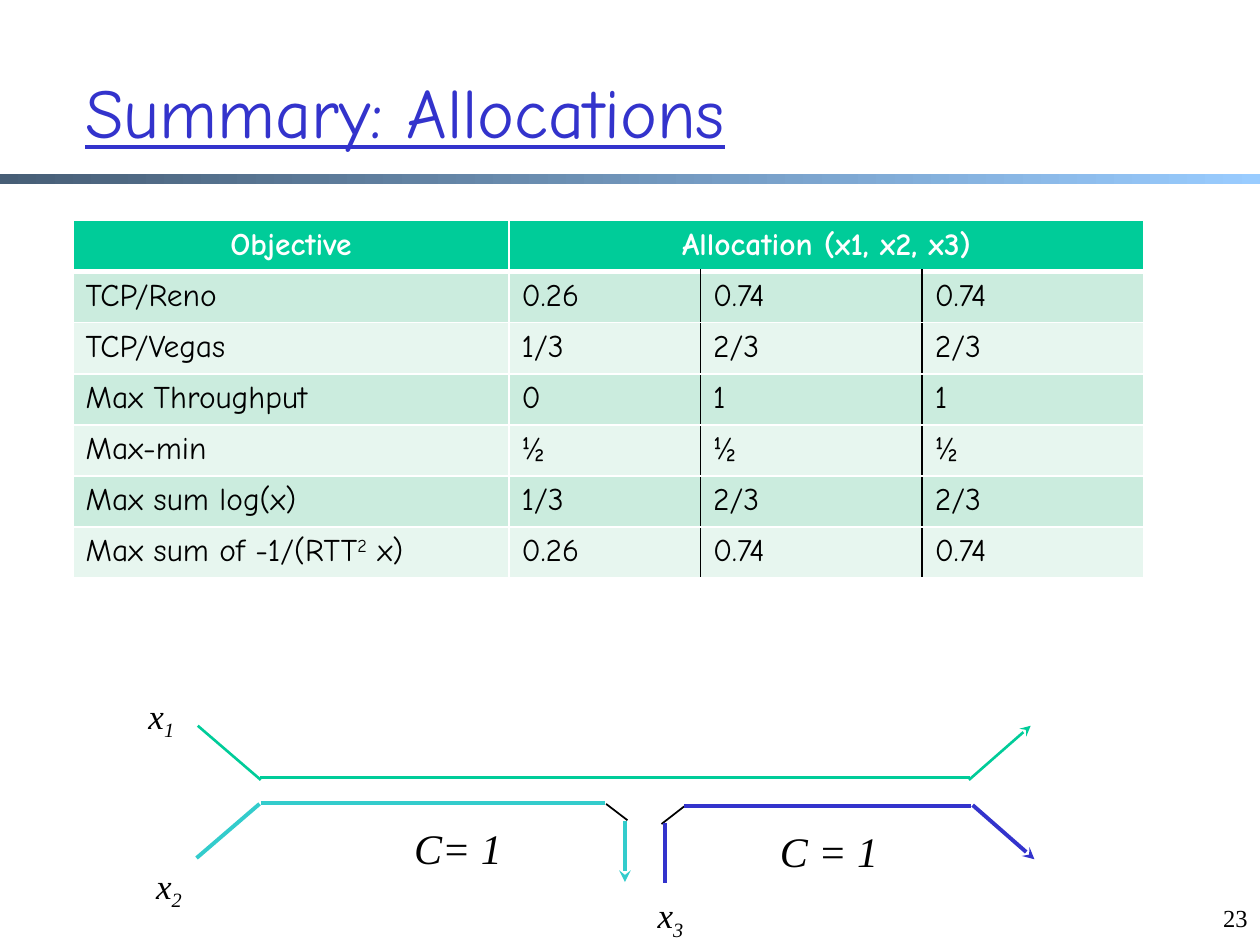
from dataclasses import dataclass

from lxml import etree
from pptx import Presentation
from pptx import util as u
from pptx.dml.color import RGBColor
from pptx.enum import shapes, text
from pptx.oxml import ns

Inches, Pt = u.Inches, u.Pt


@dataclass(frozen=True)
class Theme:
    heading_font: str = "Comic Neue"
    math_font: str = "Times New Roman"
    title_size: int = 40
    table_size: int = 18
    flow_size: int = 20
    capacity_size: int = 24
    number_size: int = 14
    black: str = "000000"
    white: str = "FFFFFF"
    blue: str = "3333CC"
    green: str = "00CC99"
    teal: str = "33CCCC"
    odd_row: str = "CBECDE"
    even_row: str = "E7F6EF"
    bar_start: str = "475E76"
    bar_end: str = "99CCFF"


theme = Theme()


def write(frame, *parts, size, font=theme.heading_font, color=theme.black,
          align=text.PP_ALIGN.LEFT, anchor=text.MSO_ANCHOR.TOP, wrap=True, **style):
    """Fill a text frame; a part is a string or a (string, baseline percent) pair."""
    frame.word_wrap = wrap
    if not wrap:
        frame.auto_size = text.MSO_AUTO_SIZE.SHAPE_TO_FIT_TEXT
    frame.vertical_anchor = anchor
    paragraph = frame.paragraphs[0]
    paragraph.alignment = align
    for part in parts:
        words, baseline = (part, 0) if isinstance(part, str) else part
        run = paragraph.add_run()
        run.text = words
        run.font.size = Pt(size)
        run.font.name = font
        run.font.color.rgb = RGBColor.from_string(color)
        for name, value in style.items():
            setattr(run.font, name, value)
        if baseline:
            run._r.get_or_add_rPr().set("baseline", str(baseline * 1000))


def add_xml(parent, tag, **attributes):
    return etree.SubElement(parent, ns.qn(tag), attributes)


prs = Presentation()
prs.slide_width, prs.slide_height = Inches(10), Inches(7.5)
slide = prs.slides.add_slide(prs.slide_layouts[6])

# Title and gradient bar
bar = slide.shapes.add_shape(shapes.MSO_SHAPE.RECTANGLE,
                             Inches(0), Inches(1.38), Inches(10), Inches(0.08))
bar.shadow.inherit = False
bar.line.fill.background()
bar.fill.gradient()
bar.fill.gradient_angle = 0
for stop, position, color in zip(bar.fill.gradient_stops, (0, 1),
                                 (theme.bar_start, theme.bar_end)):
    stop.position = position
    stop.color.rgb = RGBColor.from_string(color)

title = slide.shapes.add_textbox(Inches(0.58), Inches(0.25), Inches(8.5), Inches(1.25))
write(title.text_frame, "Summary: Allocations", size=theme.title_size, color=theme.blue,
      anchor=text.MSO_ANCHOR.MIDDLE, underline=True)

# Allocation table
allocations = [
    ("Objective", "Allocation (x1, x2, x3)", "", ""),
    ("TCP/Reno", "0.26", "0.74", "0.74"),
    ("TCP/Vegas", "1/3", "2/3", "2/3"),
    ("Max Throughput", "0", "1", "1"),
    ("Max-min", "½", "½", "½"),
    ("Max sum log(x)", "1/3", "2/3", "2/3"),
    (("Max sum of -1/(RTT", ("2", 30), " x)"), "0.26", "0.74", "0.74"),
]
table = slide.shapes.add_table(len(allocations), 4, Inches(0.58), Inches(1.75),
                               Inches(8.5), Inches(2.84)).table
for column, width in zip(table.columns, (3.46, 1.52, 1.76, 1.76)):
    column.width = Inches(width)
table.cell(0, 1).merge(table.cell(0, 3))

for row, values in enumerate(allocations):
    header = row == 0
    for col, value in enumerate(values):
        cell = table.cell(row, col)
        borders = {
            "a:lnL": (theme.black if row and col > 1 else theme.white, 1),
            "a:lnR": (theme.black if row and col in (1, 2) else theme.white, 1),
            "a:lnT": (theme.white, 3 if row == 1 else 1),
            "a:lnB": (theme.white, 3 if header else 1),
        }
        for side, (color, width) in borders.items():
            border = add_xml(cell._tc.get_or_add_tcPr(), side, w=str(Pt(width)))
            add_xml(add_xml(border, "a:solidFill"), "a:srgbClr", val=color)
        cell.fill.solid()
        cell.fill.fore_color.rgb = RGBColor.from_string(
            theme.green if header else theme.odd_row if row % 2 else theme.even_row)
        if value:
            parts = (value,) if isinstance(value, str) else value
            write(cell.text_frame, *parts, size=theme.table_size, bold=header,
                  color=theme.white if header else theme.black,
                  align=text.PP_ALIGN.CENTER if header else text.PP_ALIGN.LEFT)

# Flows through the two links: start, end, colour, width, arrow at the end
flow_lines = [
    ((4.81, 6.38), (4.98, 6.51), theme.black, 1, False),
    ((5.43, 6.40), (5.25, 6.54), theme.black, 1, False),
    ((1.57, 5.76), (2.07, 6.19), theme.green, 1.5, False),
    ((2.06, 6.17), (7.70, 6.17), theme.green, 1.5, False),
    ((7.69, 6.19), (8.18, 5.76), theme.green, 1.5, True),
    ((2.07, 6.37), (4.80, 6.37), theme.teal, 2.25, False),
    ((2.06, 6.38), (1.56, 6.81), theme.teal, 2.25, False),
    ((4.96, 6.52), (4.96, 7.00), theme.teal, 2.25, True),
    ((5.28, 6.53), (5.28, 7.01), theme.blue, 2.25, False),
    ((5.43, 6.40), (7.71, 6.40), theme.blue, 2.25, False),
    ((7.72, 6.39), (8.21, 6.82), theme.blue, 2.25, True),
]
for start, end, color, width, arrow in flow_lines:
    flow = slide.shapes.add_connector(shapes.MSO_CONNECTOR.STRAIGHT,
                                      *map(Inches, start + end))
    flow.line.width = Pt(width)
    flow.line.color.rgb = RGBColor.from_string(color)
    if arrow:
        add_xml(flow.line._get_or_add_ln(), "a:tailEnd", type="stealth")
    add_xml(flow._element.spPr, "a:effectLst")

# Flow names, link capacities and slide number
for index, left, top in (("1", 1.08, 5.46), ("2", 1.14, 6.81), ("3", 5.12, 7.04)):
    flow_name = slide.shapes.add_textbox(Inches(left), Inches(top), Inches(0.41), Inches(0.43))
    write(flow_name.text_frame, "x", (index, -25), size=theme.flow_size,
          font=theme.math_font, wrap=False, italic=True)

for words, left, top, width in (("C= 1", 3.18, 6.48, 0.91), ("C = 1", 6.08, 6.5, 1)):
    capacity = slide.shapes.add_textbox(Inches(left), Inches(top), Inches(width), Inches(0.5))
    write(capacity.text_frame, words, size=theme.capacity_size, font=theme.math_font,
          align=text.PP_ALIGN.CENTER, wrap=False, italic=True)

slide_number = slide.shapes.add_textbox(Inches(9.5), Inches(7.12), Inches(0.5), Inches(0.5))
write(slide_number.text_frame, "23", size=theme.number_size, font=theme.math_font,
      align=text.PP_ALIGN.RIGHT)

prs.save("out.pptx")
